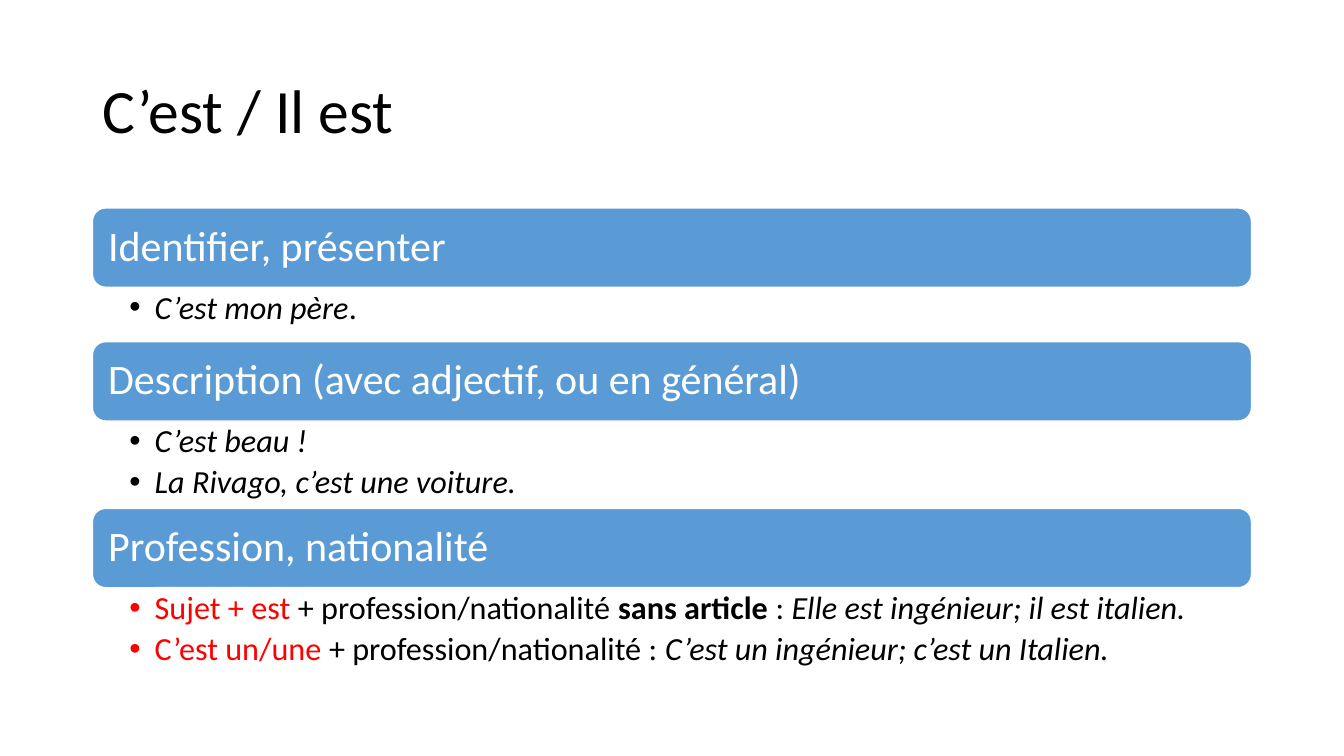
from lxml import etree
from pptx import Presentation
from pptx.dml.color import RGBColor
from pptx.enum.shapes import MSO_SHAPE
from pptx.enum.text import MSO_ANCHOR, PP_ALIGN
from pptx.oxml.ns import qn
from pptx.util import Cm, Pt

ROUNDED = MSO_SHAPE.ROUNDED_RECTANGLE
MIDDLE, TOP = MSO_ANCHOR.MIDDLE, MSO_ANCHOR.TOP
LEFT_ALIGNED = PP_ALIGN.LEFT
FONT = "Calibri"
BLACK, WHITE, RED, BLUE = "000000", "FFFFFF", "FF0000", "5B9BD5"
LEFT, WIDTH = 2.33, 29.21
HEADER_HEIGHT = 2.0
LINE_HEIGHT, DETAIL_PADDING = 0.83, 0.54

SECTIONS = [
    ("Identifier, présenter", [
        [("C’est mon père", BLACK, "i"), (".", BLACK, "")],
    ]),
    ("Description (avec adjectif, ou en général)", [
        [("C’est beau !", BLACK, "i")],
        [("La Rivago, c’est une voiture.", BLACK, "i")],
    ]),
    ("Profession, nationalité", [
        [("Sujet + est ", RED, ""), ("+ profession/nationalité ", BLACK, ""),
         ("sans article ", BLACK, "b"), (": ", BLACK, ""),
         ("Elle est ingénieur; il est italien.", BLACK, "i")],
        [("C’est un/une ", RED, ""), ("+ profession/nationalité : ", BLACK, ""),
         ("C’est un ingénieur; c’est un Italien.", BLACK, "i")],
    ]),
]


def color(value):
    """Turn a hex string into a colour."""
    return RGBColor.from_string(value)


def prepare_frame(shape, anchor, left, top, right, bottom):
    """Set wrapping, anchor and margins in centimetres, and return the text frame."""
    frame = shape.text_frame
    frame.word_wrap = True
    frame.vertical_anchor = anchor
    frame.margin_left, frame.margin_top = Cm(left), Cm(top)
    frame.margin_right, frame.margin_bottom = Cm(right), Cm(bottom)
    return frame


def style_paragraph(paragraph, size, font_color, space_after=0):
    """Apply the common spacing and font to a paragraph."""
    paragraph.alignment = LEFT_ALIGNED
    paragraph.line_spacing = 0.9
    paragraph.space_after = Pt(space_after)
    paragraph.font.name = FONT
    paragraph.font.size = Pt(size)
    paragraph.font.color.rgb = color(font_color)


def add_bullet(paragraph):
    """Give a paragraph a round bullet with a hanging indent."""
    properties = paragraph._p.get_or_add_pPr()
    properties.set("marL", str(Cm(0.64)))
    properties.set("indent", str(Cm(-0.64)))
    etree.SubElement(properties, qn("a:buFont"), typeface="Arial")
    etree.SubElement(properties, qn("a:buChar"), char="•")


def add_title(slide, text, left, top, width, height):
    """Place the slide title in the given box."""
    box = slide.shapes.add_textbox(Cm(left), Cm(top), Cm(width), Cm(height))
    frame = prepare_frame(box, MIDDLE, 0.25, 0.13, 0.25, 0.13)
    frame.text = text
    style_paragraph(frame.paragraphs[0], 44, BLACK)


def add_header(slide, text, left, top, width, height):
    """Place a rounded section bar with its heading."""
    bar = slide.shapes.add_shape(ROUNDED, Cm(left), Cm(top), Cm(width), Cm(height))
    bar.shadow.inherit = False
    bar.fill.solid()
    bar.fill.fore_color.rgb = color(BLUE)
    bar.line.color.rgb = color(WHITE)
    bar.line.width = Pt(1)
    frame = prepare_frame(bar, MIDDLE, 0.3, 0.3, 0.3, 0.3)
    frame.text = text
    style_paragraph(frame.paragraphs[0], 30, WHITE)


def add_details(slide, lines, left, top, width, height):
    """Place the bulleted examples of a section."""
    box = slide.shapes.add_textbox(Cm(left), Cm(top), Cm(width), Cm(height))
    frame = prepare_frame(box, TOP, 0.93, 0.1, 0.58, 0.1)
    for index, line in enumerate(lines):
        paragraph = frame.add_paragraph() if index else frame.paragraphs[0]
        add_bullet(paragraph)
        style_paragraph(paragraph, 23, BLACK, 4.6)
        for text, font_color, emphasis in line:
            run = paragraph.add_run()
            run.text = text
            run.font.color.rgb = color(font_color)
            run.font.bold = emphasis == "b"
            run.font.italic = emphasis == "i"


def add_sections(slide, left, top, width):
    """Stack the section bars and their examples downwards."""
    for heading, lines in SECTIONS:
        add_header(slide, heading, left, top, width, HEADER_HEIGHT)
        top += HEADER_HEIGHT
        detail_height = DETAIL_PADDING + LINE_HEIGHT * len(lines)
        add_details(slide, lines, left, top, width, detail_height)
        top += detail_height


def main():
    """Build and save the presentation."""
    presentation = Presentation()
    presentation.slide_width, presentation.slide_height = Cm(33.87), Cm(19.05)
    slide = presentation.slides.add_slide(presentation.slide_layouts[6])
    add_title(slide, "C’est / Il est", LEFT, 1.01, WIDTH, 3.68)
    add_sections(slide, LEFT, 5.24, WIDTH)
    presentation.save("out.pptx")


if __name__ == "__main__":
    main()
